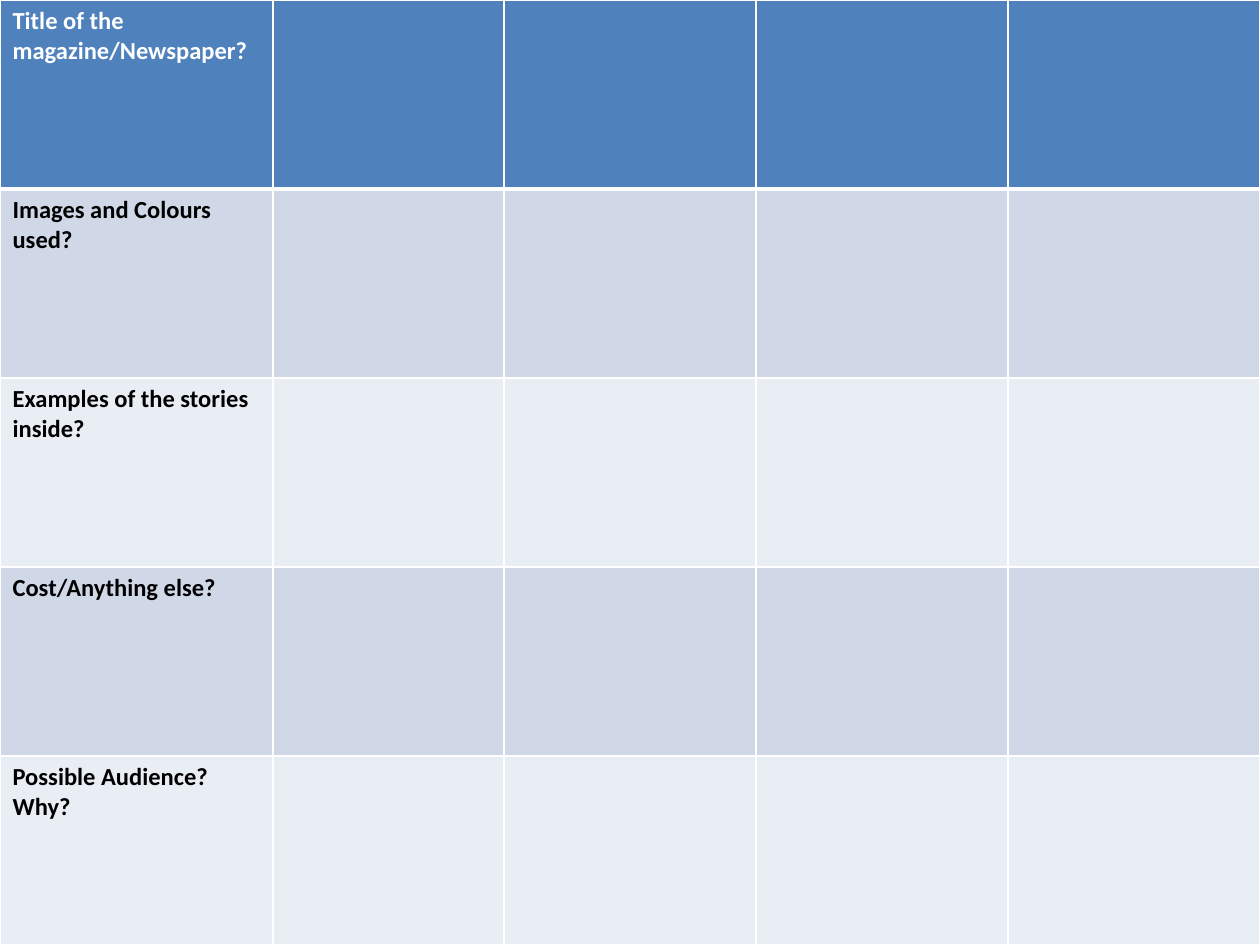
"""Build a magazine and newspaper comparison grid."""
from lxml import etree
from pptx import Presentation
from pptx import util as u
from pptx.dml.color import RGBColor
from pptx.oxml.ns import qn

QUESTIONS = [
    "Title of the magazine/Newspaper?",
    "Images and Colours used?",
    "Examples of the stories inside?",
    "Cost/Anything else?",
    "Possible Audience? Why?",
]
COLORS = {"header": "4F81BD", "odd": "D0D8E8", "even": "E9EDF4",
          "rule": "FFFFFF", "header_text": "FFFFFF", "body_text": "000000"}
WIDTH, HEIGHT = 1260, 945
COLUMN_WIDTHS = [273, 231, 252, 252, 252]
THIN, THICK = 1, 3
PX = u.Inches(1) // 126


def rgb(name):
    return RGBColor.from_string(COLORS[name])


def add_borders(cell, widths):
    for side, points in widths.items():
        line = etree.SubElement(cell._tc.get_or_add_tcPr(), qn(f"a:ln{side}"),
                                w=str(u.Pt(points)))
        fill = etree.SubElement(line, qn("a:solidFill"))
        etree.SubElement(fill, qn("a:srgbClr"), val=COLORS["rule"])


def add_question(cell, question, color):
    run = cell.text_frame.paragraphs[0].add_run()
    run.text = question
    run.font.name = "Calibri"
    run.font.size = u.Pt(14)
    run.font.bold = True
    run.font.color.rgb = rgb(color)


deck = Presentation()
deck.slide_width, deck.slide_height = WIDTH * PX, HEIGHT * PX
slide = deck.slides.add_slide(deck.slide_layouts[6])
grid = slide.shapes.add_table(len(QUESTIONS), len(COLUMN_WIDTHS), 0, 0,
                              WIDTH * PX, HEIGHT * PX).table

for column, width in zip(grid.columns, COLUMN_WIDTHS):
    column.width = width * PX

for index, (row, question) in enumerate(zip(grid.rows, QUESTIONS)):
    row.height = HEIGHT * PX // len(QUESTIONS)
    band = "header" if index == 0 else "odd" if index % 2 else "even"
    borders = {"L": THIN, "R": THIN,
               "T": THICK if index == 1 else THIN,
               "B": THICK if index == 0 else THIN}
    for cell in row.cells:
        add_borders(cell, borders)
        cell.fill.solid()
        cell.fill.fore_color.rgb = rgb(band)
    add_question(row.cells[0], question,
                 "header_text" if index == 0 else "body_text")

deck.save("out.pptx")
